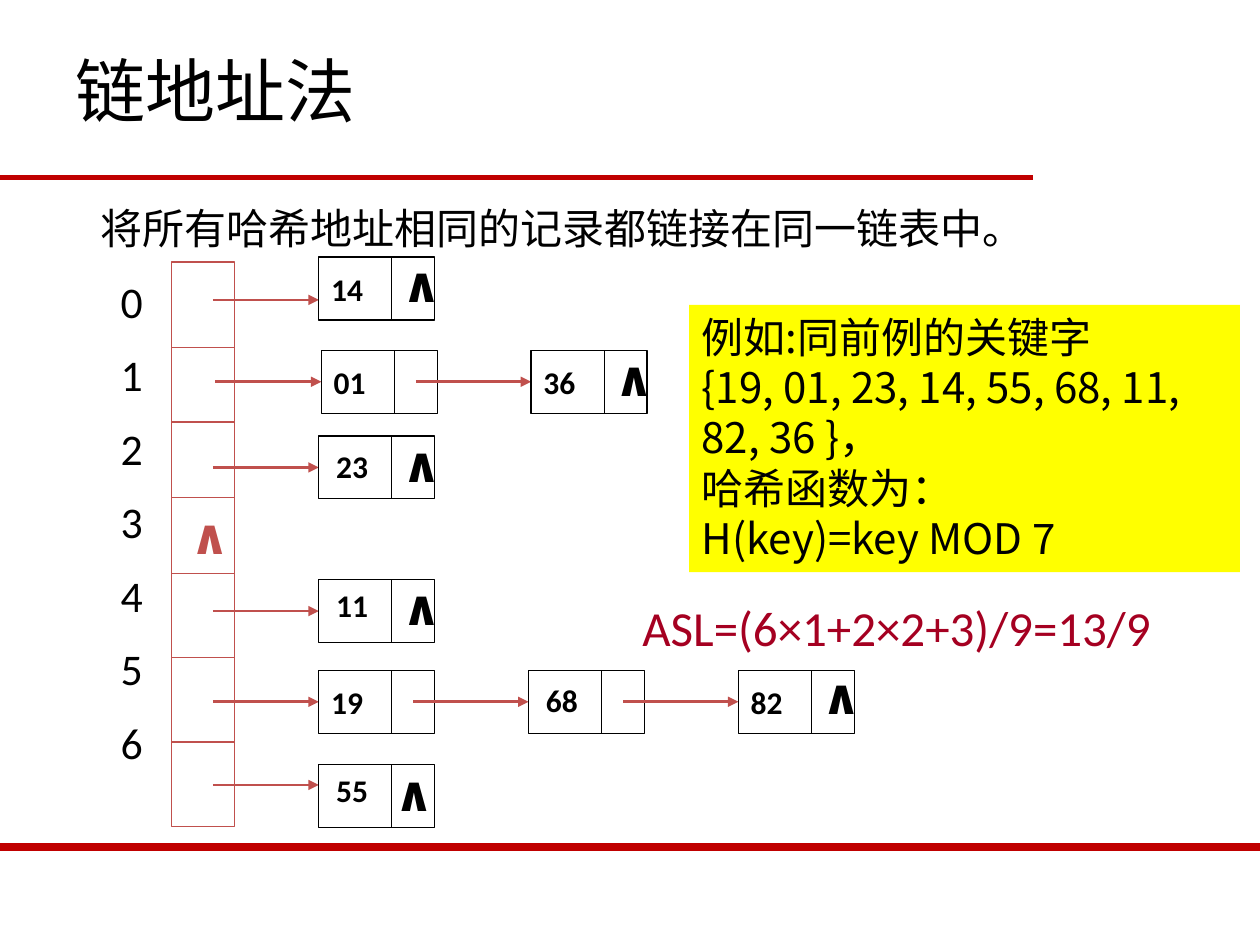
import pptx
import pptx.dml.color
import pptx.enum.shapes
import pptx.enum.text
import pptx.oxml.ns
import pptx.util
from lxml import etree

Inches = pptx.util.Inches
Pt = pptx.util.Pt
qn = pptx.oxml.ns.qn

RED, CRIMSON, BRICK = "C00000", "A50021", "C0504D"
BLACK, YELLOW = "000000", "FFFF00"
LATIN, CHINESE = "Calibri", "Noto Sans CJK SC"
NODE_WIDTH, NODE_HEIGHT = 0.92, 0.5


def color(value):
    return pptx.dml.color.RGBColor.from_string(value)


class HashSlide:
    """Holds the slide and draws its kinds of element."""

    def __init__(self, slide):
        self.slide = slide

    def set_text(self, shape, text, size, font=LATIN, ink=BLACK, bold=False,
                 wrap=False, gap=0, spacing=None):
        frame = shape.text_frame
        frame.text = text
        frame.word_wrap = wrap
        for index, paragraph in enumerate(frame.paragraphs):
            paragraph.alignment = pptx.enum.text.PP_ALIGN.LEFT
            paragraph.space_before = Pt(gap if index else 0)
            if spacing:
                paragraph.line_spacing = spacing
            for run in paragraph.runs:
                run.font.name = font
                run.font.size = Pt(size)
                run.font.bold = bold
                run.font.color.rgb = color(ink)
                east_asian = etree.SubElement(run.font._element, qn("a:ea"))
                east_asian.set("typeface", CHINESE)

    def text(self, left, top, width, height, text, size, **style):
        box = self.slide.shapes.add_textbox(
            Inches(left), Inches(top), Inches(width), Inches(height))
        self.set_text(box, text, size, **style)
        return box

    def box(self, left, top, width, height, line=None, fill=None):
        shape = self.slide.shapes.add_shape(
            pptx.enum.shapes.MSO_SHAPE.RECTANGLE,
            Inches(left), Inches(top), Inches(width), Inches(height))
        shape.shadow.inherit = False
        if fill:
            shape.fill.solid()
            shape.fill.fore_color.rgb = color(fill)
        else:
            shape.fill.background()
        if line:
            shape.line.color.rgb = color(line)
            shape.line.width = Pt(0.75)
        else:
            shape.line.fill.background()
        return shape

    def line(self, x1, y1, x2, y2, ink=BLACK, width=0.75, arrow=False):
        connector = self.slide.shapes.add_connector(
            pptx.enum.shapes.MSO_CONNECTOR.STRAIGHT,
            Inches(x1), Inches(y1), Inches(x2), Inches(y2))
        connector.line.color.rgb = color(ink)
        connector.line.width = Pt(width)
        properties = connector._element.spPr
        if arrow:
            tail = etree.SubElement(properties.find(qn("a:ln")), qn("a:tailEnd"))
            tail.set("type", "triangle")
        etree.SubElement(properties, qn("a:effectLst"))

    def arrow(self, start, end, y):
        self.line(start, y, end, y, BRICK, 1.5, arrow=True)

    def null_mark(self, left, top, ink=BLACK):
        self.text(left, top, 0.44, 0.57, "∧", 28, ink=ink, bold=True)

    def node(self, left, top, key, label_drop=None):
        shape = self.box(left, top, NODE_WIDTH, NODE_HEIGHT, line=BLACK)
        if label_drop is None:
            shape.text_frame.vertical_anchor = pptx.enum.text.MSO_ANCHOR.MIDDLE
            self.set_text(shape, key, 18, bold=True)
        else:
            self.text(left + 0.04, top + label_drop, 0.46, 0.4, key, 18, bold=True)
        self.line(left + 0.58, top, left + 0.58, top + NODE_HEIGHT)

    def chain(self, left, top, nodes, null_offset=(0.56, -0.07), arrow_drop=0.25):
        self.arrow(left - 0.84, left, top + arrow_drop)
        for index, (key, label_drop) in enumerate(nodes):
            node_left = left + index * 1.665
            if index:
                self.arrow(node_left - 0.915, node_left, top + arrow_drop)
            self.node(node_left, top, key, label_drop)
        self.null_mark(node_left + null_offset[0], top + null_offset[1])


def main():
    presentation = pptx.Presentation()
    presentation.slide_width = Inches(10)
    presentation.slide_height = Inches(7.5)
    page = HashSlide(presentation.slides.add_slide(presentation.slide_layouts[6]))

    # Rules, title and definition
    page.line(0, 1.41, 8.2, 1.41, RED, 3)
    page.line(0, 6.72, 10, 6.72, RED, 4.5)
    page.text(0.7, 1.48, 7.38, 0.59, "将所有哈希地址相同的记录都链接在同一链表中。",
              24, font=CHINESE, wrap=True, spacing=1.2)
    title = page.text(-0.5, 0.33, 4.08, 0.77, "链地址法", 40, font=CHINESE, wrap=True)
    title.text_frame.margin_left = Inches(1.1)

    # Bucket column with its addresses
    page.box(1.36, 2.08, 0.5, 4.48, line=BRICK)
    for y in (2.76, 3.35, 3.95, 4.55, 5.22, 5.89):
        page.line(1.36, y, 1.86, y, BRICK)
    page.text(0.86, 2.13, 0.58, 4.28, "\n".join(str(i) for i in range(7)),
              25, wrap=True, gap=12)
    page.null_mark(1.41, 3.96, BRICK)

    # Linked lists: keys with the drop of a separate label, if any
    page.chain(2.53, 2.04, [("14", None)], (0.56, -0.08), arrow_drop=0.34)
    page.chain(2.55, 2.78, [("01", None), ("36", None)])
    page.chain(2.53, 3.46, [("23", 0.04)])
    page.chain(2.53, 4.6, [("11", 0)])
    page.chain(2.53, 5.32, [("19", None), ("68", 0.04), ("82", None)], (0.56, -0.09))
    page.chain(2.53, 6.07, [("55", 0)], (0.5, -0.07), arrow_drop=0.16)

    # Example and average search length
    example = page.box(5.47, 2.42, 4.37, 2.12, fill=YELLOW)
    example.text_frame.vertical_anchor = pptx.enum.text.MSO_ANCHOR.TOP
    page.set_text(example, "例如:同前例的关键字\v{19, 01, 23, 14, 55, 68, 11, 82, 36 }，\v"
                  "哈希函数为：\vH(key)=key MOD 7", 24, font=CHINESE, wrap=True)
    page.text(5, 4.69, 4.82, 0.57, "ASL=(6×1+2×2+3)/9=13/9", 28, ink=CRIMSON)

    presentation.save("out.pptx")


if __name__ == "__main__":
    main()
